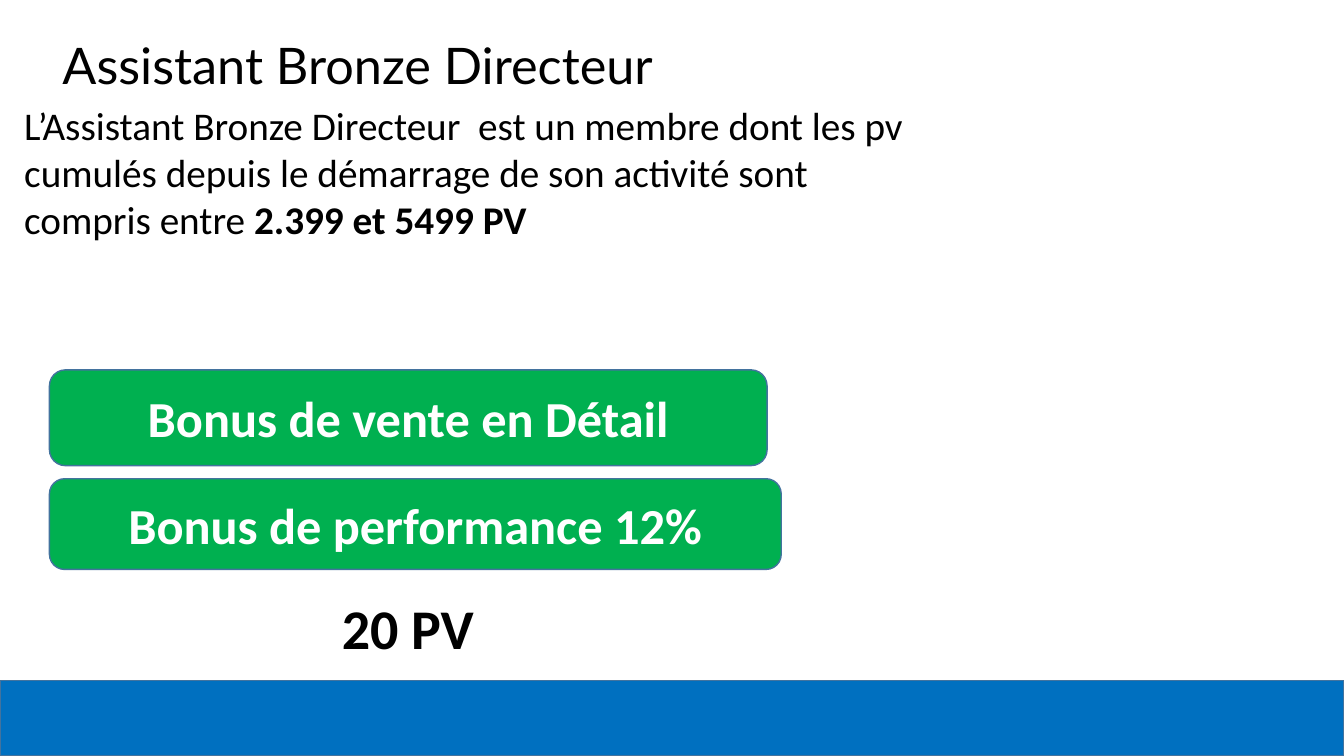
from pptx import Presentation
from pptx.dml.color import RGBColor
from pptx.enum.shapes import MSO_SHAPE
from pptx.enum.text import MSO_ANCHOR, MSO_AUTO_SIZE, PP_ALIGN
from pptx.oxml.ns import qn
from pptx.util import Inches, Pt
from lxml import etree

ROUNDED, RECTANGLE = MSO_SHAPE.ROUNDED_RECTANGLE, MSO_SHAPE.RECTANGLE
TOP, MIDDLE = MSO_ANCHOR.TOP, MSO_ANCHOR.MIDDLE
LEFT, CENTER = PP_ALIGN.LEFT, PP_ALIGN.CENTER
GROW = MSO_AUTO_SIZE.SHAPE_TO_FIT_TEXT

COLORS = {"text": "000000", "bonus": "00B050", "bonus text": "FFFFFF",
          "band": "0070C0", "outline": "43739E"}

# Boxes are left, top, width, height in percent of the slide.
RANK = "Assistant Bronze Directeur"
RANK_BOX = (3.9, 3.87, 68.93, 9.47)
DEFINITION = [
    ("L’Assistant Bronze Directeur  est un membre dont les pv cumulés "
     "depuis le démarrage de son activité sont compris entre ", False),
    ("2.399 et 5499 PV", True),
]
DEFINITION_BOX = (1.05, 12.67, 67.5, 20.13)
BONUSES = [
    ("Bonus de vente en Détail", (3.68, 48.93, 53.4, 12.67)),
    ("Bonus de performance 12%", (3.68, 63.33, 54.45, 12)),
]
POINTS = "20 PV"
POINTS_BOX = (15.23, 77.87, 33.6, 10.27)
POINTS_INDENT = 1.36
BAND_BOX = (0, 90, 100, 10)

prs = Presentation()
prs.slide_width, prs.slide_height = Inches(13.33), Inches(7.5)
slide = prs.slides.add_slide(prs.slide_layouts[1])


def to_lengths(box):
    sides = (prs.slide_width, prs.slide_height) * 2
    return [int(side * share / 100) for side, share in zip(sides, box)]


def place(placeholder, box):
    placeholder.left, placeholder.top, placeholder.width, placeholder.height = to_lengths(box)


def style_text(frame, size, color="text", font="Calibri", bold=False,
               align=LEFT, anchor=TOP):
    frame.word_wrap = True
    frame.vertical_anchor = anchor
    for paragraph in frame.paragraphs:
        paragraph.alignment = align
        paragraph.space_before = Pt(0)
        for run in paragraph.runs:
            run.font.size = Pt(size)
            run.font.name = font
            run.font.bold = bold
            run.font.color.rgb = RGBColor.from_string(COLORS[color])


def add_panel(kind, box, color):
    panel = slide.shapes.add_shape(kind, *to_lengths(box))
    panel.shadow.inherit = False
    panel.fill.solid()
    panel.fill.fore_color.rgb = RGBColor.from_string(COLORS[color])
    panel.line.color.rgb = RGBColor.from_string(COLORS["outline"])
    panel.line.width = Pt(1)
    return panel


rank = slide.shapes.title
place(rank, RANK_BOX)
rank.text_frame.text = RANK
style_text(rank.text_frame, 36, font="Lato")
rank.text_frame.auto_size = GROW

for bonus, box in BONUSES:
    frame = add_panel(ROUNDED, box, "bonus").text_frame
    frame.text = bonus
    style_text(frame, 36, "bonus text", bold=True, align=CENTER, anchor=MIDDLE)

definition = slide.placeholders[1]
place(definition, DEFINITION_BOX)
sentence = definition.text_frame.paragraphs[0]
for words, _ in DEFINITION:
    sentence.add_run().text = words
style_text(definition.text_frame, 28)
definition.text_frame.auto_size = GROW
for run, (_, bold) in zip(sentence.runs, DEFINITION):
    run.font.bold = bold
properties = sentence._p.get_or_add_pPr()
properties.set("marL", "0")
properties.set("indent", "0")
etree.SubElement(properties, qn("a:buNone"))

add_panel(RECTANGLE, BAND_BOX, "band")

points = slide.shapes.add_textbox(*to_lengths(POINTS_BOX)).text_frame
points.text = POINTS
points.margin_left = Inches(POINTS_INDENT)
style_text(points, 40, bold=True)
points.auto_size = GROW

prs.save("out.pptx")
